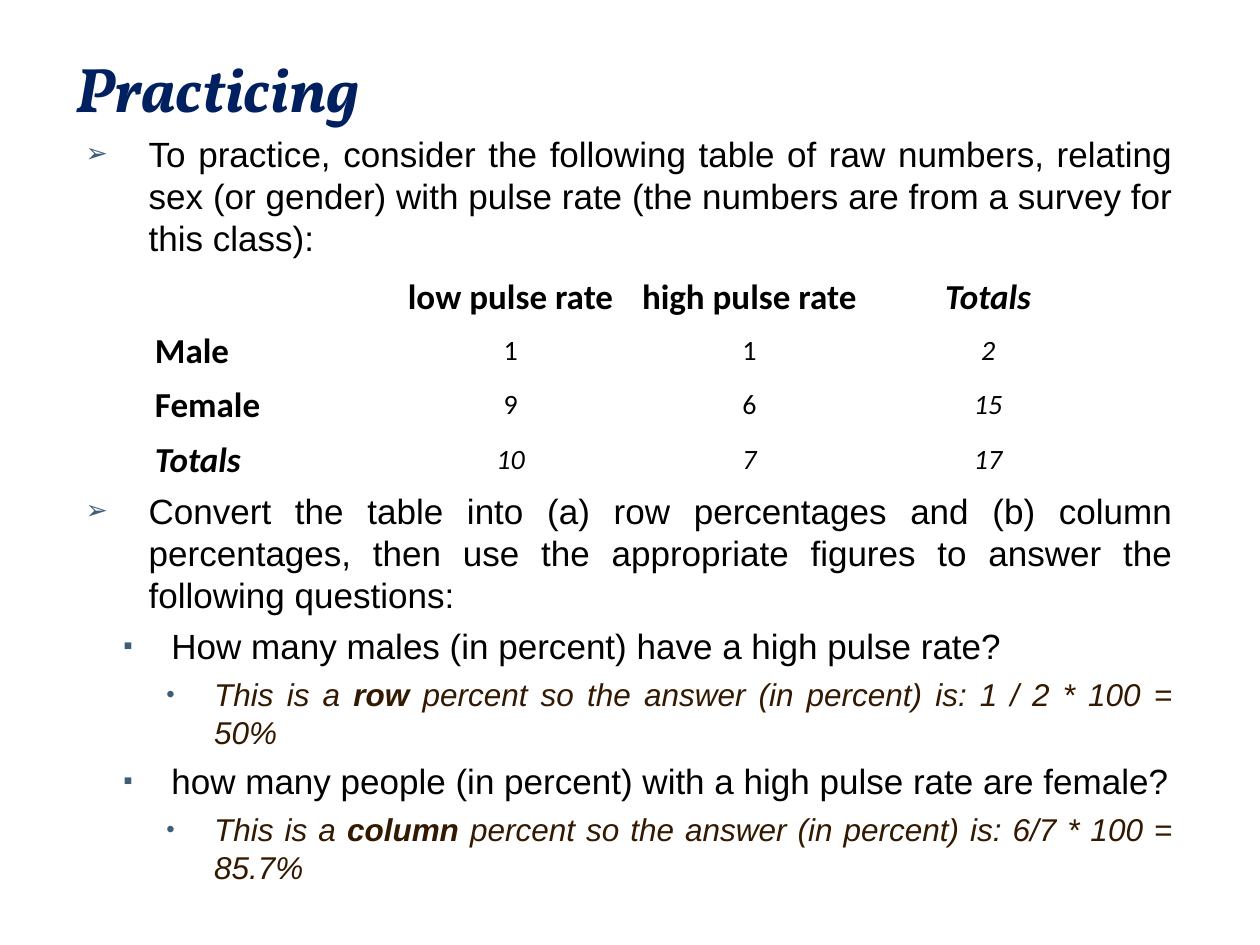
from lxml import etree
from pptx import Presentation
from pptx.dml.color import RGBColor
from pptx.enum.text import MSO_ANCHOR, MSO_AUTO_SIZE, PP_ALIGN
from pptx.oxml.ns import qn
from pptx.util import Inches, Pt

TOP, MIDDLE = MSO_ANCHOR.TOP, MSO_ANCHOR.MIDDLE
LEFT, CENTER, JUSTIFY = PP_ALIGN.LEFT, PP_ALIGN.CENTER, PP_ALIGN.JUSTIFY
NO_FIT = MSO_AUTO_SIZE.NONE

NAVY = RGBColor(0x00, 0x20, 0x60)
BLACK = RGBColor(0x00, 0x00, 0x00)
BROWN = RGBColor(0x32, 0x19, 0x00)
SLATE = RGBColor(0x3E, 0x5D, 0x78)

TITLE = "Practicing"
ITEMS = [
    (0, ["To practice, consider the following table of raw numbers, relating sex "
         "(or gender) with pulse rate (the numbers are from a survey for this class):"]),
    (0, ["Convert the table into (a) row percentages and (b) column percentages, "
         "then use the appropriate figures to answer the following questions:"]),
    (1, ["How many males (in percent) have a high pulse rate?"]),
    (2, ["This is a ", "row", " percent so the answer (in percent) is: 1 / 2 * 100 = 50%"]),
    (1, ["how many people (in percent) with a high pulse rate are female?"]),
    (2, ["This is a ", "column", " percent so the answer (in percent) is: 6/7 * 100 = 85.7%"]),
]
ROWS = [
    ["", "low pulse rate", "high pulse rate", "Totals"],
    ["Male", "1", "1", "2"],
    ["Female", "9", "6", "15"],
    ["Totals", "10", "7", "17"],
]
LEVELS = [
    {"mark": "➢", "left": 0.5, "hang": 0.5, "gap": 6, "size": 20, "color": BLACK, "slant": False},
    {"mark": "▪", "left": 0.68, "hang": 0.38, "gap": 5, "size": 20, "color": BLACK, "slant": False},
    {"mark": "•", "left": 1.02, "hang": 0.38, "gap": 5, "size": 18, "color": BROWN, "slant": True},
]
TABLE_GAP = 132
WIDTH, ROW, INSET = 7.58, 0.43, 0.02


def style(run, face, size, color, bold, slant):
    font = run.font
    font.name, font.size = face, Pt(size)
    font.bold, font.italic = bold, slant
    font.color.rgb = color


def place(shape, left, top, width, height):
    shape.left, shape.top = Inches(left), Inches(top)
    shape.width, shape.height = Inches(width), Inches(height)
    frame = shape.text_frame
    frame.auto_size, frame.word_wrap = NO_FIT, True
    frame.vertical_anchor = TOP
    return frame


def bullet(para, look):
    props = para._p.get_or_add_pPr()
    props.set("marL", str(Inches(look["left"])))
    props.set("indent", str(-Inches(look["hang"])))
    tint = etree.SubElement(props, qn("a:buClr"))
    etree.SubElement(tint, qn("a:srgbClr"), val=str(SLATE))
    etree.SubElement(props, qn("a:buSzPct"), val="76000")
    etree.SubElement(props, qn("a:buFont"), typeface="Arial")
    etree.SubElement(props, qn("a:buChar"), char=look["mark"])


def add_title(slide):
    frame = place(slide.shapes.title, 0.5, 0.34, 9, 1.08)
    frame.text = TITLE
    para = frame.paragraphs[0]
    para.alignment = LEFT
    style(para.runs[0], "Vollkorn", 36, NAVY, True, True)


def add_body(slide):
    frame = place(slide.placeholders[1], 0.58, 1, 8.83, 6)
    for i, (level, parts) in enumerate(ITEMS):
        look = LEVELS[level]
        para = frame.add_paragraph() if i else frame.paragraphs[0]
        para.level, para.alignment = level, JUSTIFY
        para.line_spacing = 1.0
        para.space_before = Pt(TABLE_GAP if i == 1 else look["gap"])
        bullet(para, look)
        for j, part in enumerate(parts):
            run = para.add_run()
            run.text = part
            style(run, "Arial", look["size"], look["color"], j == 1, look["slant"])


def add_rates(slide):
    rows, cols = len(ROWS), len(ROWS[0])
    table = slide.shapes.add_table(rows, cols, Inches(1.21), Inches(2.12),
                                   Inches(WIDTH), Inches(ROW * rows)).table
    table.first_row = table.horz_banding = False
    for r, texts in enumerate(ROWS):
        for c, text in enumerate(texts):
            cell = table.cell(r, c)
            cell.fill.background()
            cell.vertical_anchor = MIDDLE
            cell.margin_left = cell.margin_right = Inches(INSET)
            cell.margin_top = cell.margin_bottom = Inches(INSET)
            cell.text = text
            para = cell.text_frame.paragraphs[0]
            para.alignment = CENTER if c else LEFT
            para.line_spacing, para.space_after = 1.15, Pt(10)
            head = r == 0 or c == 0
            for run in para.runs:
                style(run, "Calibri", 20 if head else 16, BLACK, head,
                      r == rows - 1 or c == cols - 1)


def main():
    deck = Presentation()
    deck.slide_width, deck.slide_height = Inches(10), Inches(7.5)
    slide = deck.slides.add_slide(deck.slide_layouts[1])
    add_body(slide)
    add_title(slide)
    add_rates(slide)
    deck.save("out.pptx")


if __name__ == "__main__":
    main()
